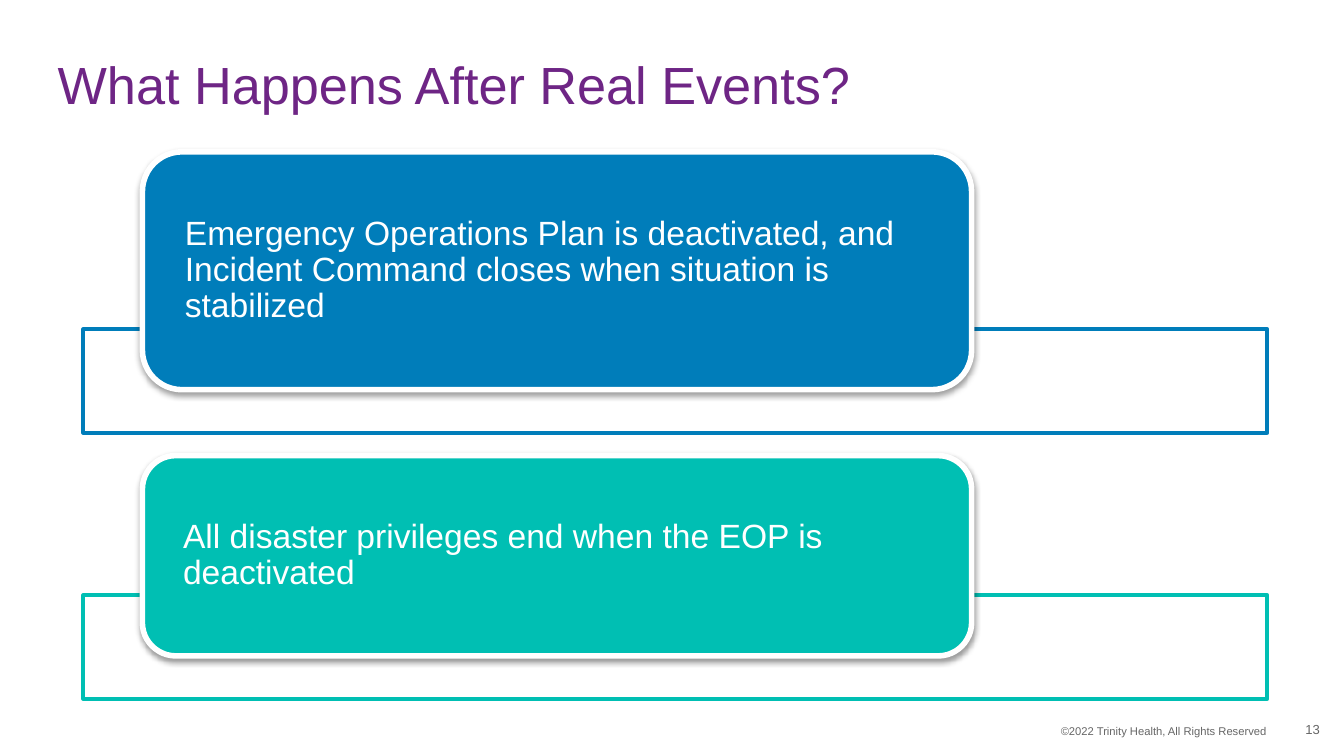
from pptx import Presentation
from pptx.dml.color import RGBColor
from pptx.enum.shapes import MSO_SHAPE
from pptx.enum.text import MSO_ANCHOR, PP_ALIGN
from pptx.oxml import parse_xml
from pptx.oxml.ns import nsdecls
from pptx.util import Inches, Pt

PURPLE = RGBColor(0x6E, 0x25, 0x85)
BLUE = RGBColor(0x00, 0x7D, 0xBA)
TEAL = RGBColor(0x00, 0xBF, 0xB3)
GRAY = RGBColor(0x66, 0x66, 0x66)
WHITE = RGBColor(0xFF, 0xFF, 0xFF)

# Content
TITLE = "What Happens After Real Events?"
FOOTER = "©2022 Trinity Health, All Rights Reserved"
PAGE_NUMBER = "13"
STEPS = [  # text, colour, card top, card height
    ("Emergency Operations Plan is deactivated, and Incident Command closes "
     "when situation is stabilized", BLUE, 1.13, 1.77),
    ("All disaster privileges end when the EOP is deactivated", TEAL, 3.39, 1.49),
]

# Layout in inches
FRAME_LEFT, FRAME_WIDTH, FRAME_HEIGHT = 0.62, 8.81, 0.77
CARD_LEFT, CARD_WIDTH = 1.06, 6.17
OVERLAP = 0.45  # how far each card reaches down into its frame


def set_text(s, text, size, color, align=PP_ALIGN.LEFT, anchor=MSO_ANCHOR.MIDDLE,
             insets=(0.1, 0.05, 0.1, 0.05), spacing=None):
    tf = s.text_frame
    tf.word_wrap = True
    tf.vertical_anchor = anchor
    tf.margin_left, tf.margin_top, tf.margin_right, tf.margin_bottom = map(Inches, insets)
    p = tf.paragraphs[0]
    p.alignment = align
    p.line_spacing = spacing
    r = p.add_run()
    r.text = text
    r.font.name = "Arial"
    r.font.size = Pt(size)
    r.font.color.rgb = color


def add_box(slide, kind, box, fill, line, line_width):
    s = slide.shapes.add_shape(kind, *map(Inches, box))
    s.shadow.inherit = False
    s.fill.solid()
    s.fill.fore_color.rgb = fill
    s.line.color.rgb = line
    s.line.width = Pt(line_width)
    return s


def add_shadow(s):
    effects = s._element.spPr.find("{*}effectLst")
    effects.append(parse_xml(
        f'<a:outerShdw {nsdecls("a")} blurRad="{Pt(3.1)}" dist="{Pt(1.6)}" '
        'dir="5400000" rotWithShape="0"><a:srgbClr val="000000">'
        '<a:alpha val="38000"/></a:srgbClr></a:outerShdw>'))


def add_label(slide, box, text, **fmt):
    set_text(slide.shapes.add_textbox(*map(Inches, box)), text, **fmt)


prs = Presentation()
prs.slide_width = Inches(10)
prs.slide_height = Inches(10 * 9 / 16)  # widescreen
slide = prs.slides.add_slide(prs.slide_layouts[6])

# Title and footer
add_label(slide, (0.43, 0.38, 9, 0.55), TITLE, size=28, color=PURPLE,
          insets=(0, 0, 0, 0), spacing=0.9)
add_label(slide, (5.33, 5.34, 4.19, 0.2), FOOTER, size=6, color=GRAY,
          align=PP_ALIGN.RIGHT, anchor=MSO_ANCHOR.TOP)
add_label(slide, (9.38, 5.28, 0.44, 0.3), PAGE_NUMBER, size=7, color=GRAY,
          align=PP_ALIGN.RIGHT, insets=(0.1, 0.05, 0, 0.05))

# Each step: an outlined frame with a card over its top edge
for text, color, top, height in STEPS:
    frame_top = top + height - OVERLAP
    add_box(slide, MSO_SHAPE.RECTANGLE,
            (FRAME_LEFT, frame_top, FRAME_WIDTH, FRAME_HEIGHT), WHITE, color, 2)
    card = add_box(slide, MSO_SHAPE.ROUNDED_RECTANGLE,
                   (CARD_LEFT, top, CARD_WIDTH, height), color, WHITE, 3)
    add_shadow(card)
    set_text(card, text, 18, WHITE, insets=(0.23, 0, 0.23, 0), spacing=0.9)

prs.save("out.pptx")
